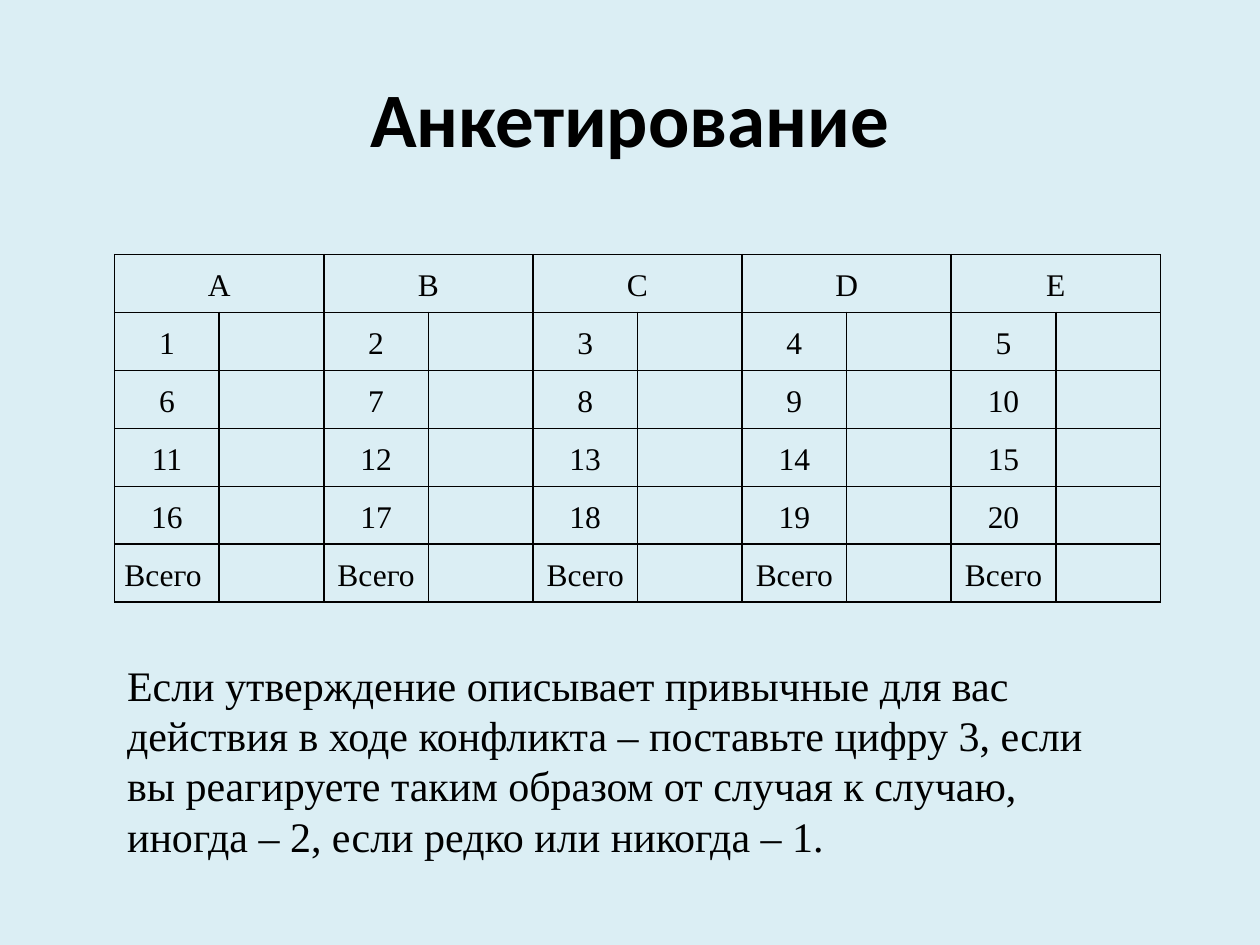
from dataclasses import dataclass

from lxml.etree import SubElement
from pptx import Presentation
from pptx.dml.color import RGBColor
from pptx.enum.text import MSO_ANCHOR as Anchor, PP_ALIGN as Align
from pptx.oxml.ns import qn
from pptx.util import Inches, Pt

BLACK = RGBColor(0x00, 0x00, 0x00)
PALE_BLUE = RGBColor(0xDB, 0xEE, 0xF4)
SERIF = "Times New Roman"

TITLE_FONT = {"name": "Calibri", "size": Pt(44), "bold": True}
CELL_FONT = {"name": SERIF, "size": Pt(18), "bold": False}
BODY_FONT = {"name": SERIF, "size": Pt(24), "bold": False}

ROWS, COL_WIDTH, ROW_HEIGHT = 6, Inches(0.83), Inches(0.46)
MARGINS = dict.fromkeys(
    ("margin_left", "margin_right", "margin_top", "margin_bottom"), Inches(0.07))
INSTRUCTION = (
    "Если утверждение описывает привычные для вас действия в ходе конфликта – "
    "поставьте цифру 3, если вы реагируете таким образом от случая к случаю, "
    "иногда – 2, если редко или никогда – 1."
)


@dataclass
class ScoreGroup:
    """A pair of columns: question numbers and blank score cells."""
    letter: str
    total: str = "Всего"


GROUPS = [ScoreGroup("А", "Всего "), ScoreGroup("В"), ScoreGroup("С"),
          ScoreGroup("D"), ScoreGroup("E")]


def set_attrs(obj, values: dict) -> None:
    for name, value in values.items():
        setattr(obj, name, value)


def write(tf, text: str, font: dict, align: Align) -> None:
    p = tf.paragraphs[0]
    p.alignment = align
    r = p.add_run()
    r.text = text
    set_attrs(r.font, font)
    r.font.color.rgb = BLACK


def add_borders(cell) -> None:
    tc_pr = cell._tc.get_or_add_tcPr()
    for side in ("lnL", "lnR", "lnT", "lnB"):
        ln = SubElement(tc_pr, qn(f"a:{side}"), w=str(Pt(1)))
        fill = SubElement(ln, qn("a:solidFill"))
        SubElement(fill, qn("a:srgbClr"), val=str(BLACK))


def format_cell(cell) -> None:
    set_attrs(cell, MARGINS)
    add_borders(cell)
    cell.fill.background()
    p = cell.text_frame.paragraphs[0]
    p.line_spacing = 1.15
    p.font.size = CELL_FONT["size"]


def add_score_table(slide) -> None:
    cols = 2 * len(GROUPS)
    table = slide.shapes.add_table(ROWS, cols, Inches(0.91), Inches(2.02),
                                   COL_WIDTH * cols, ROW_HEIGHT * ROWS).table
    set_attrs(table, {"first_row": False, "horz_banding": False})
    for cell in table.iter_cells():
        format_cell(cell)
    for i, group in enumerate(GROUPS):
        numbers = [str(i + 1 + len(GROUPS) * k) for k in range(ROWS - 2)]
        for row, text in enumerate([group.letter, *numbers, group.total]):
            write(table.cell(row, 2 * i).text_frame, text, CELL_FONT, Align.CENTER)
        table.cell(0, 2 * i).merge(table.cell(0, 2 * i + 1))


def add_title(slide) -> None:
    title = slide.shapes.title
    set_attrs(title, {"left": Inches(0.5), "top": Inches(0.3),
                      "width": Inches(9), "height": Inches(1.25)})
    title.text_frame.vertical_anchor = Anchor.MIDDLE
    write(title.text_frame, "Анкетирование", TITLE_FONT, Align.CENTER)


def add_instruction(slide) -> None:
    sp = slide.shapes.add_textbox(Inches(0.91), Inches(5.17), Inches(8.19), Inches(1.72))
    tf = sp.text_frame
    set_attrs(tf, {"word_wrap": True, "vertical_anchor": Anchor.MIDDLE})
    write(tf, INSTRUCTION, BODY_FONT, Align.LEFT)


def main() -> None:
    prs = Presentation()
    prs.slide_width, prs.slide_height = Inches(10), Inches(7.5)
    slide = prs.slides.add_slide(prs.slide_layouts[5])
    slide.background.fill.solid()
    slide.background.fill.fore_color.rgb = PALE_BLUE
    add_title(slide)
    add_score_table(slide)
    add_instruction(slide)
    prs.save("out.pptx")


if __name__ == "__main__":
    main()
